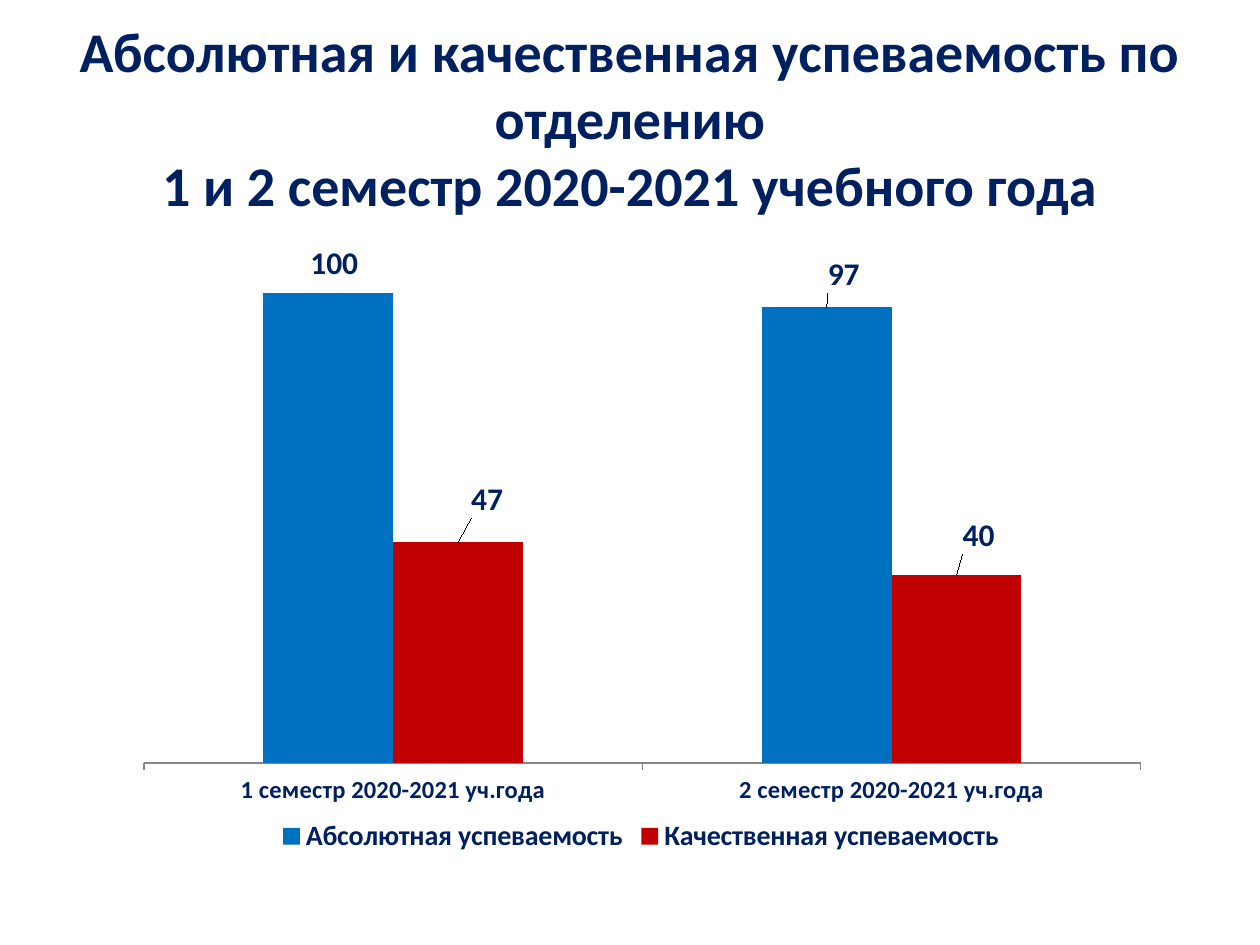
import pptx
import pptx.util
import pptx.chart.data
import pptx.dml.color
import pptx.enum.chart
import pptx.enum.text
import pptx.oxml

PX = 914400 // 126
NAVY = "002060"
NS = "http://schemas.openxmlformats.org/drawingml/2006/chart"


def paint(color, code):
    color.rgb = pptx.dml.color.RGBColor.from_string(code)


def style(font, text=None, size=16, bold=True, code=NAVY):
    """Format a font; given text, put it in the frame passed instead."""
    if text is not None:
        font.text = text
        para = font.paragraphs[0]
        para.alignment = pptx.enum.text.PP_ALIGN.CENTER
        font = para.runs[0].font
        for run in para.runs[1:]:
            style(run.font, size=size, bold=bold, code=code)
    font.name = "Calibri"
    font.size = pptx.util.Pt(size)
    font.bold = bold
    paint(font.color, code)


deck = pptx.Presentation()
deck.slide_width = pptx.util.Inches(10)
deck.slide_height = pptx.util.Inches(7.5)
slide = deck.slides.add_slide(deck.slide_layouts[6])

# Title
box = slide.shapes.add_textbox(63 * PX, 38 * PX, 1134 * PX, 158 * PX)
frame = box.text_frame
frame.word_wrap = True
frame.vertical_anchor = pptx.enum.text.MSO_ANCHOR.MIDDLE
style(frame, "Абсолютная и качественная успеваемость по отделению\v"
      "1 и 2 семестр 2020-2021 учебного года", size=32)

# Chart: name, values, colour, label shifts in px
rows = [
    ("Абсолютная успеваемость", (100, 97), "0070C0", [(6, -6), (17, -9)]),
    ("Качественная успеваемость", (47, 40), "C00000", [(29, -19), (22, -16)]),
]
wide, high = 1134, 615
data = pptx.chart.data.CategoryChartData()
data.categories = ["1 семестр 2020-2021 уч.года", "2 семестр 2020-2021 уч.года"]
for name, vals, code, shifts in rows:
    data.add_series(name, vals)
chart = slide.shapes.add_chart(
    pptx.enum.chart.XL_CHART_TYPE.COLUMN_CLUSTERED,
    74 * PX, 244 * PX, wide * PX, high * PX, data).chart
style(chart.font, size=10, bold=False, code="000000")
chart.has_title = False

chart.has_legend = True
chart.legend.position = pptx.enum.chart.XL_LEGEND_POSITION.BOTTOM
chart.legend.include_in_layout = False
style(chart.legend.font, size=16)

axis = chart.category_axis
axis.major_tick_mark = pptx.enum.chart.XL_TICK_MARK.OUTSIDE
axis.format.line.width = pptx.util.Pt(0.75)
paint(axis.format.line.color, "868686")
style(axis.tick_labels.font, size=14)

scale = chart.value_axis
scale.visible = False
scale.has_major_gridlines = False
scale.minimum_scale = 0
scale.maximum_scale = 100

plot = chart.plots[0]
plot.gap_width = 184
plot.overlap = 0
plot.vary_by_categories = False
for item, (name, vals, code, shifts) in zip(plot.series, rows):
    item.format.fill.solid()
    paint(item.format.fill.fore_color, code)
    item.invert_if_negative = False
    for i, (dx, dy) in enumerate(shifts):
        label = item.points[i].data_label
        style(label.font, size=18)
        label.position = pptx.enum.chart.XL_LABEL_POSITION.OUTSIDE_END
        node = item.data_labels._element.findall(f"{{{NS}}}dLbl")[i]
        node.insert(1, pptx.oxml.parse_xml(
            f'<c:layout xmlns:c="{NS}"><c:manualLayout>'
            f'<c:x val="{dx / wide:.4f}"/><c:y val="{dy / high:.4f}"/>'
            '</c:manualLayout></c:layout>'))
    item.data_labels.show_value = True
    style(item.data_labels.font, size=18)

# Fixed inner plot area
area = chart._chartSpace.chart.plotArea
for old in area.findall(f"{{{NS}}}layout"):
    area.remove(old)
parts = {"x": 70 / wide, "y": 48 / high, "w": 997 / wide, "h": 471 / high}
area.insert(0, pptx.oxml.parse_xml(
    f'<c:layout xmlns:c="{NS}"><c:manualLayout><c:layoutTarget val="inner"/>'
    '<c:xMode val="edge"/><c:yMode val="edge"/>'
    + "".join(f'<c:{k} val="{v:.4f}"/>' for k, v in parts.items())
    + '</c:manualLayout></c:layout>'))

deck.save("out.pptx")
